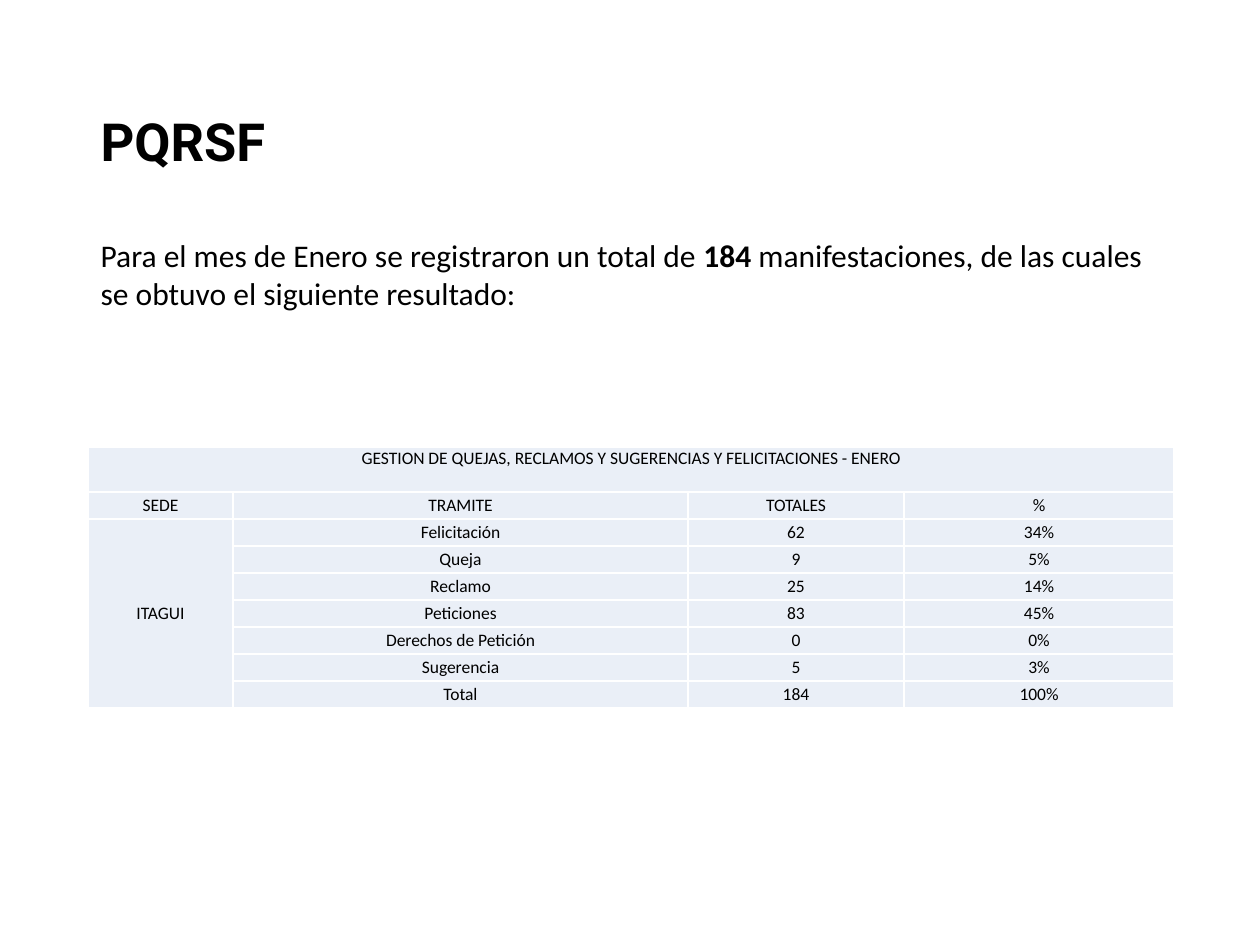
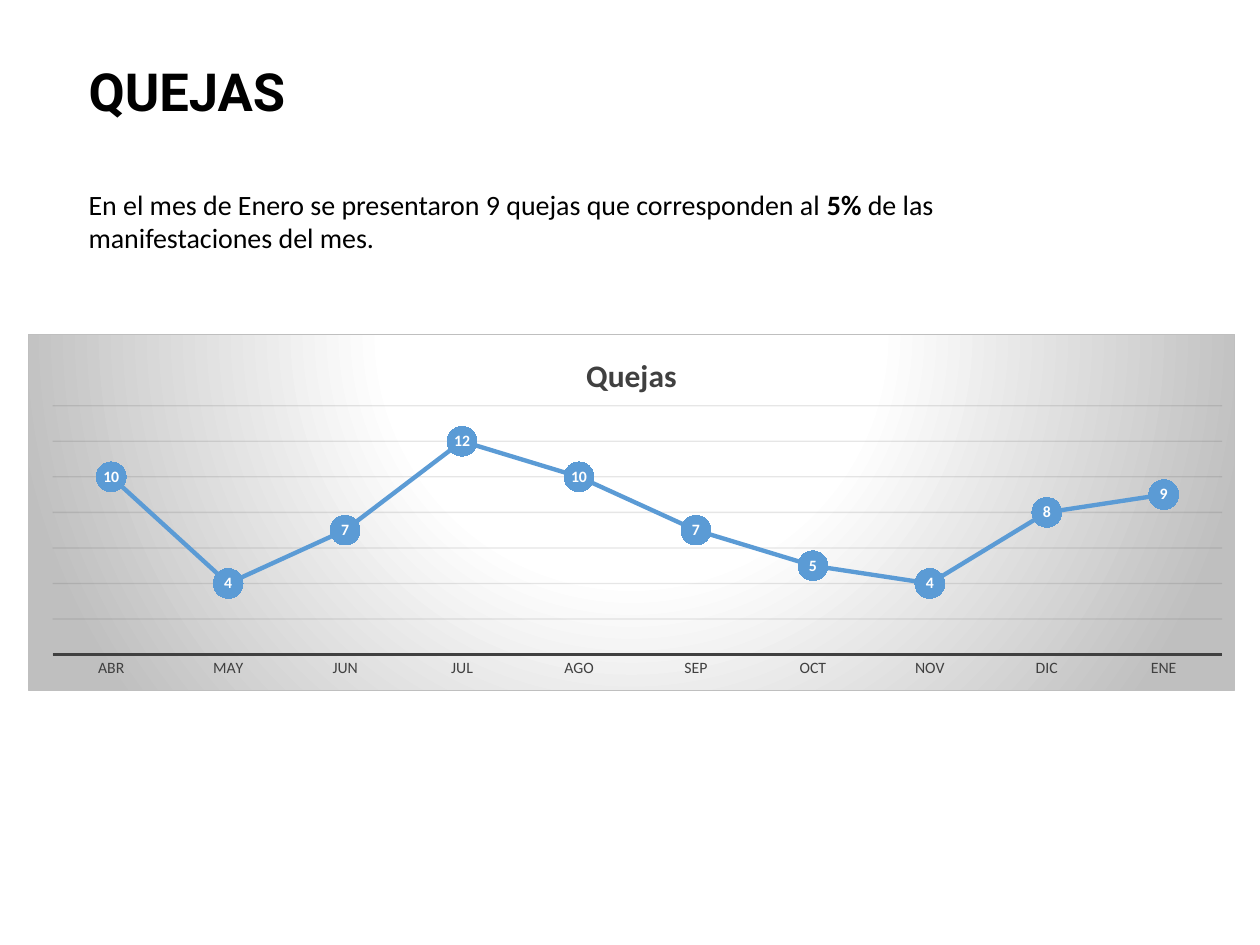
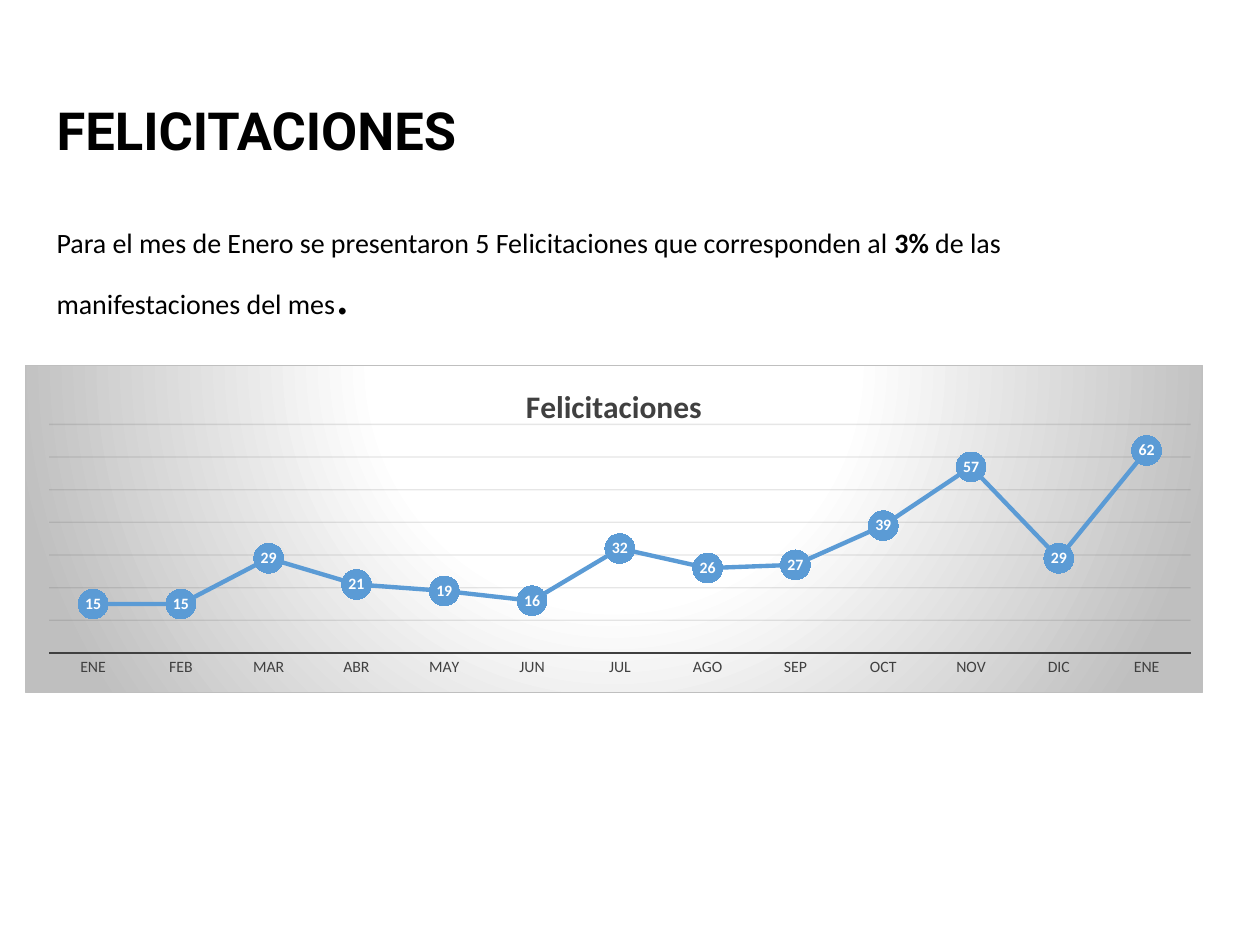
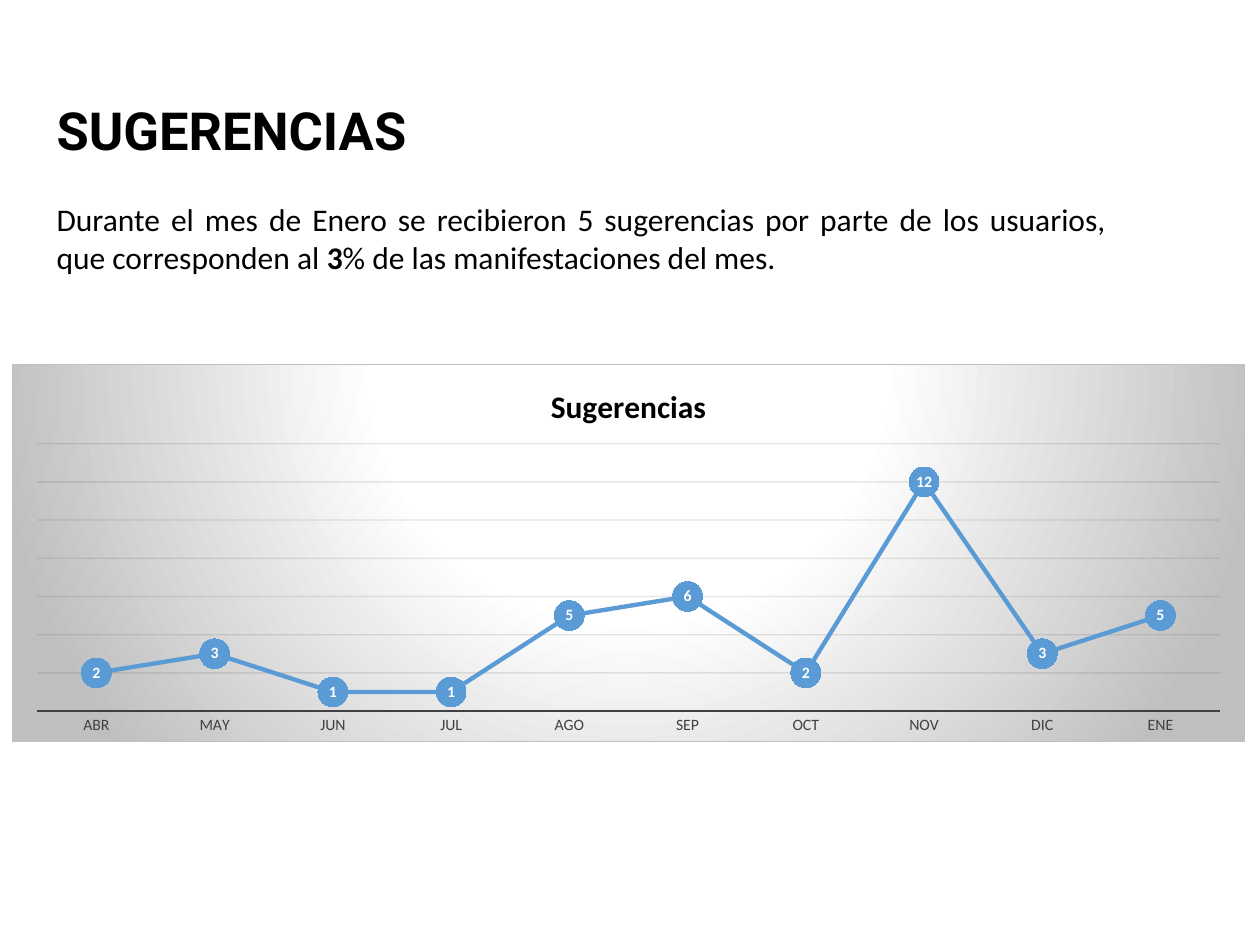
from lxml import etree
from pptx import Presentation
from pptx.chart.data import CategoryChartData
from pptx.dml.color import RGBColor
from pptx.enum.chart import XL_CHART_TYPE as ChartType, XL_LABEL_POSITION as LabelPos
from pptx.enum.chart import XL_MARKER_STYLE as Marker, XL_TICK_MARK as Tick
from pptx.enum.text import MSO_ANCHOR as Anchor, MSO_AUTO_SIZE as AutoSize, PP_ALIGN as Align
from pptx.oxml import parse_xml
from pptx.oxml.ns import nsdecls, qn
from pptx.util import Pt

PX = 914400 / 126  # EMU in one px
COLORS = {"text": "000000", "label": "404040", "blue": "5B9BD5", "white": "FFFFFF",
          "cell": "EAEFF7", "grid": "0D0D0D", "edge": "BFBFBF"}
RGB = {name: RGBColor.from_string(value) for name, value in COLORS.items()}


def px(*lengths):
    return [round(length * PX) for length in lengths]


def write(paragraph, text, size=10, bold=False, color="text", font="Calibri", align=Align.LEFT):
    paragraph.alignment = align
    run = paragraph.add_run()
    run.text = text
    run.font.size, run.font.bold, run.font.name = Pt(size), bold, font
    run.font.color.rgb = RGB[color]


CHART_AREA = f"""<c:spPr {nsdecls("c", "a")}>
  <a:gradFill><a:gsLst>
    <a:gs pos="0"><a:srgbClr val="{COLORS["white"]}"/></a:gs>
    <a:gs pos="39000"><a:srgbClr val="{COLORS["white"]}"/></a:gs>
    <a:gs pos="100000"><a:srgbClr val="{COLORS["edge"]}"/></a:gs>
  </a:gsLst><a:path path="circle"><a:fillToRect l="50000" t="-80000" r="50000" b="180000"/></a:path>
  </a:gradFill>
  <a:ln w="9525"><a:solidFill><a:srgbClr val="{COLORS["edge"]}"/></a:solidFill></a:ln>
</c:spPr>"""

MONTHS = ["ENE", "FEB", "MAR", "ABR", "MAY", "JUN", "JUL", "AGO", "SEP", "OCT", "NOV", "DIC", "ENE"]

# Each section: title and body boxes, runs as (text, bold, size), and its chart if any
SECTIONS = [
    dict(title="PQRSF", left=88, top=103, body_top=230, width=1097, height=90, align=Align.LEFT,
         runs=[("Para el mes de Enero se registraron un total de ", False, 18), ("184 ", True, 18),
               ("manifestaciones, de las cuales se obtuvo el siguiente resultado:", False, 18)]),
    dict(title="QUEJAS", left=76, top=53, body_top=181, width=1014, height=80, align=Align.LEFT,
         runs=[("En el mes de Enero se presentaron 9 quejas que corresponden al ", False, 16),
               ("5% ", True, 16), ("de las manifestaciones del mes.", False, 16)],
         chart=dict(name="Quejas", box=(28, 334, 1207, 357), color="label", top=14, step=2,
                    plot=(0.02, 0.2, 0.97, 0.7), values=[10, 4, 7, 12, 10, 7, 5, 4, 8, 9])),
    dict(title="FELICITACIONES", left=44, top=92, body_top=219, width=1075, height=115, align=Align.LEFT,
         runs=[("Para el mes de Enero se presentaron 5 Felicitaciones que corresponden al ", False, 16),
               ("3% ", True, 16), ("de las manifestaciones del mes", False, 16), (".", False, 32)],
         chart=dict(name="Felicitaciones", box=(25, 365, 1178, 328), color="label", top=70, step=10,
                    plot=(0.02, 0.18, 0.97, 0.7),
                    values=[15, 15, 29, 21, 19, 16, 32, 26, 27, 39, 57, 29, 62])),
    dict(title="SUGERENCIAS", left=44, top=92, body_top=194, width=1075, height=90, align=Align.JUSTIFY,
         runs=[("Durante el mes de Enero se recibieron 5 sugerencias por parte de los usuarios, "
                "que corresponden al ", False, 18), ("3", True, 18),
               ("% de las manifestaciones del mes.", False, 18)],
         chart=dict(name="Sugerencias", box=(12, 364, 1233, 378), color="text", top=14, step=2,
                    plot=(0.02, 0.21, 0.96, 0.71), values=[2, 3, 1, 1, 5, 6, 2, 12, 3, 5])),
]

deck = Presentation()
deck.slide_width, deck.slide_height = px(1260, 945)

for section in SECTIONS:
    slide = deck.slides.add_slide(deck.slide_layouts[1])

    # Title and introduction
    heading, intro = slide.placeholders
    for holder, top, height in ((heading, section["top"], 74), (intro, section["body_top"], section["height"])):
        holder.left, holder.top, holder.width, holder.height = px(
            section["left"], top, section["width"], height)
        frame = holder.text_frame
        frame.word_wrap, frame.auto_size, frame.vertical_anchor = True, AutoSize.NONE, Anchor.TOP
    write(heading.text_frame.paragraphs[0], section["title"], size=30, bold=True, font="Roboto")
    sentence = intro.text_frame.paragraphs[0]
    sentence.space_before = Pt(0)
    properties = sentence._p.get_or_add_pPr()
    properties.set("marL", "0")
    properties.set("indent", "0")
    etree.SubElement(properties, qn("a:buNone"))
    for text, bold, size in section["runs"]:
        write(sentence, text, size=size, bold=bold, align=section["align"])

    if "chart" not in section:
        continue

    # Monthly line chart
    trend = section["chart"]
    data = CategoryChartData()
    data.categories = MONTHS[-len(trend["values"]):]
    data.add_series(trend["name"], trend["values"])
    chart = slide.shapes.add_chart(ChartType.LINE_MARKERS, *px(*trend["box"]), data).chart
    chart.font.size, chart.font.name = Pt(10), "Calibri"
    chart.font.color.rgb = RGB["text"]
    chart.has_legend = False
    chart.has_title = True
    write(chart.chart_title.text_frame.paragraphs[0], trend["name"], size=18, bold=True,
          color=trend["color"], align=Align.CENTER)
    chart.element.find(qn("c:chart")).addnext(parse_xml(CHART_AREA))

    # Plot position
    area = chart.element.find(".//" + qn("c:plotArea"))
    for old_layout in area.findall(qn("c:layout")):
        area.remove(old_layout)
    layout = etree.Element(qn("c:layout"))
    manual = etree.SubElement(layout, qn("c:manualLayout"))
    settings = [("layoutTarget", "inner"), ("xMode", "edge"), ("yMode", "edge")]
    for tag, value in settings + list(zip("xywh", trend["plot"])):
        etree.SubElement(manual, qn(f"c:{tag}")).set("val", str(value))
    area.insert(0, layout)

    # Axes and faint gridlines
    months, scale = chart.category_axis, chart.value_axis
    months.major_tick_mark = months.minor_tick_mark = Tick.NONE
    months.tick_labels.font.size, months.tick_labels.font.name = Pt(9), "Calibri"
    months.tick_labels.font.color.rgb = RGB["label"]
    months.format.line.width = Pt(1.5)
    months.format.line.color.rgb = RGB["label"]
    scale.minimum_scale, scale.maximum_scale, scale.major_unit = 0, trend["top"], trend["step"]
    scale.visible = False
    scale.has_major_gridlines = True
    gridline = scale.major_gridlines.format.line
    gridline.width = Pt(0.75)
    gridline.color.rgb = RGB["grid"]
    grid_color = area.find(f".//{qn('c:majorGridlines')}//{qn('a:srgbClr')}")
    etree.SubElement(grid_color, qn("a:alpha")).set("val", "10000")

    # Line, round markers and the values inside them
    chart.plots[0].vary_by_categories = False
    line = chart.plots[0].series[0]
    line.smooth = False
    line.format.line.width = Pt(2.5)
    line.format.line.color.rgb = RGB["blue"]
    line.marker.style, line.marker.size = Marker.CIRCLE, 17
    line.marker.format.fill.solid()
    line.marker.format.fill.fore_color.rgb = RGB["blue"]
    line.marker.format.line.fill.background()
    labels = line.data_labels
    labels.show_value, labels.position = True, LabelPos.CENTER
    labels.font.size, labels.font.bold, labels.font.name = Pt(9), True, "Calibri"
    labels.font.color.rgb = RGB["white"]

# Totals table on the first slide
COLUMNS = [145, 455, 216, 270]
ROWS = [45] + [27] * 8
CELLS = [
    ["GESTION DE QUEJAS, RECLAMOS Y SUGERENCIAS Y FELICITACIONES - ENERO", "", "", ""],
    ["SEDE", "TRAMITE", "TOTALES", "%"],
    ["ITAGUI", "Felicitación", "62", "34%"],
    ["", "Queja", "9", "5%"],
    ["", "Reclamo", "25", "14%"],
    ["", "Peticiones", "83", "45%"],
    ["", "Derechos de Petición", "0", "0%"],
    ["", "Sugerencia", "5", "3%"],
    ["", "Total", "184", "100%"],
]
totals = deck.slides[0].shapes.add_table(
    len(ROWS), len(COLUMNS), *px(88, 447, sum(COLUMNS), sum(ROWS))).table
totals.first_row = totals.horz_banding = False
for column, width in zip(totals.columns, px(*COLUMNS)):
    column.width = width
for row, height in zip(totals.rows, px(*ROWS)):
    row.height = height
totals.cell(0, 0).merge(totals.cell(0, 3))
totals.cell(2, 0).merge(totals.cell(8, 0))

for r, texts in enumerate(CELLS):
    for c, text in enumerate(texts):
        cell = totals.cell(r, c)
        cell.margin_left, cell.margin_top, cell.margin_right, cell.margin_bottom = px(1, 1, 1, 0)
        cell.vertical_anchor = Anchor.MIDDLE if r else Anchor.TOP
        for side in ("lnL", "lnR", "lnT", "lnB"):
            border = etree.SubElement(cell._tc.get_or_add_tcPr(), qn(f"a:{side}"), w="12700")
            paint = etree.SubElement(border, qn("a:solidFill"))
            etree.SubElement(paint, qn("a:srgbClr"), val=COLORS["white"])
        cell.fill.solid()
        cell.fill.fore_color.rgb = RGB["cell"]
        if text:
            write(cell.text_frame.paragraphs[0], text, align=Align.CENTER)

deck.save("out.pptx")
